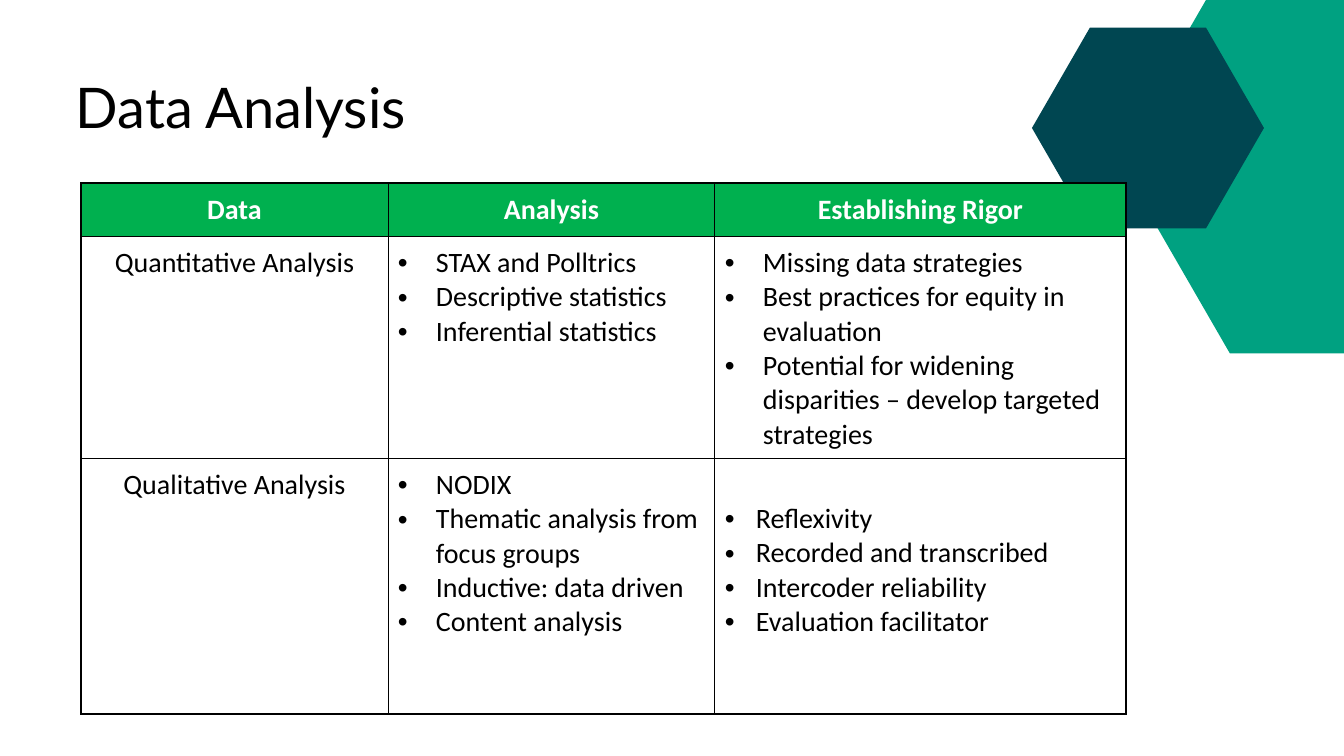
"""Build the Data Analysis slide with its table and two hexagons."""
import math
from pptx import Presentation, util as u
from pptx.dml.color import RGBColor
from pptx.enum import text
from pptx.oxml import parse_xml
from pptx.oxml.ns import nsdecls

TITLE = "Data Analysis"
HEADER = ["Data", "Analysis", "Establishing Rigor"]
BODY = [
    [
        ["Quantitative Analysis"],
        ["STAX and Polltrics", "Descriptive statistics", "Inferential statistics"],
        ["Missing data strategies", "Best practices for equity in evaluation",
         "Potential for widening disparities – develop targeted strategies"],
    ],
    [
        ["Qualitative Analysis"],
        ["NODIX", "Thematic analysis from focus groups",
         "Inductive: data driven", "Content analysis"],
        ["Reflexivity", "Recorded and transcribed",
         "Intercoder reliability", "Evaluation facilitator"],
    ],
]
THEME = {
    "title_font": "Lato", "title_size": 40,
    "table_font": "Calibri", "table_size": 20,
    "ink": "000000", "paper": "FFFFFF", "header": "00B04F",
    "green": "00A181", "teal": "004651",
    "outer_line": 1.5, "inner_line": 0.75,
}
HEXAGONS = [(1344, 156, 228, "green"), (1148, 128, 116, "teal")]
TITLE_BOX = (76, 73, 870, 67)
TABLE_ORIGIN = (81, 183)
COLUMNS = [307, 327, 411]
ROWS = [53, 222, 256]
MARGINS = {"margin_left": 10, "margin_right": 10, "margin_top": 10, "margin_bottom": 6}
LOWERED_CELL = (2, 2)
LOWERED_TOP = 44
INDENT, LOWERED_INDENT = 38, 31
SCALE = 914400 / 100.8


def px(length):
    return u.Emu(round(length * SCALE))


def color(name):
    return RGBColor.from_string(THEME[name])


def assign(target, values):
    for name, value in values.items():
        setattr(target, name, value)


def write(paragraph, words, kind, ink, bold=False):
    run = paragraph.add_run()
    run.text = words
    assign(run.font, {"name": THEME[kind + "_font"],
                      "size": u.Pt(THEME[kind + "_size"]), "bold": bold})
    run.font.color.rgb = color(ink)


def add_hexagon(slide, center_x, center_y, radius, fill):
    corners = [(round((center_x + radius * math.cos(k * math.pi / 3)) * SCALE),
                round((center_y + radius * math.sin(k * math.pi / 3)) * SCALE))
               for k in range(6)]
    builder = slide.shapes.build_freeform(*corners[0])
    builder.add_line_segments(corners[1:], close=True)
    shape = builder.convert_to_shape()
    shape.shadow.inherit = False
    shape.fill.solid()
    shape.fill.fore_color.rgb = color(fill)
    shape.line.fill.background()


def add_bullet(paragraph, indent):
    properties = paragraph._p.get_or_add_pPr()
    properties.set("marL", str(px(indent)))
    properties.set("indent", str(-px(indent)))
    for xml in (f'<a:buFont {nsdecls("a")} typeface="Arial"/>',
                f'<a:buChar {nsdecls("a")} char="•"/>'):
        properties.append(parse_xml(xml))


def add_borders(cell, row, column):
    outer = {"L": column == 0, "R": column == len(COLUMNS) - 1,
             "T": row == 0, "B": row == len(ROWS) - 1}
    properties = cell._tc.get_or_add_tcPr()
    for position, (side, is_outer) in enumerate(outer.items()):
        width = u.Pt(THEME["outer_line" if is_outer else "inner_line"])
        properties.insert(position, parse_xml(
            f'<a:ln{side} {nsdecls("a")} w="{width}"><a:solidFill>'
            f'<a:srgbClr val="{THEME["ink"]}"/></a:solidFill></a:ln{side}>'))


def fill_cell(cell, row, column, lines):
    lowered = (row, column) == LOWERED_CELL
    margins = dict(MARGINS, margin_top=LOWERED_TOP) if lowered else MARGINS
    assign(cell, {name: px(value) for name, value in margins.items()})
    cell.vertical_anchor = text.MSO_ANCHOR.TOP
    is_header = row == 0
    if is_header:
        cell.fill.solid()
        cell.fill.fore_color.rgb = color("header")
    else:
        cell.fill.background()
    for position, line in enumerate(lines):
        frame = cell.text_frame
        paragraph = frame.add_paragraph() if position else frame.paragraphs[0]
        if is_header or column == 0:
            paragraph.alignment = text.PP_ALIGN.CENTER
        else:
            add_bullet(paragraph, LOWERED_INDENT if lowered else INDENT)
        write(paragraph, line, "table", "paper" if is_header else "ink", is_header)
    add_borders(cell, row, column)


def add_analysis_table(slide):
    content = [[[heading] for heading in HEADER], *BODY]
    box = (*TABLE_ORIGIN, sum(COLUMNS), sum(ROWS))
    table = slide.shapes.add_table(len(ROWS), len(COLUMNS), *map(px, box)).table
    assign(table, {"first_row": False, "horz_banding": False})
    for column, width in zip(table.columns, COLUMNS):
        column.width = px(width)
    for row, height in zip(table.rows, ROWS):
        row.height = px(height)
    for row, cells in enumerate(content):
        for column, lines in enumerate(cells):
            fill_cell(table.cell(row, column), row, column, lines)


def add_title(slide):
    frame = slide.shapes.add_textbox(*map(px, TITLE_BOX)).text_frame
    assign(frame, {"word_wrap": True, **dict.fromkeys(MARGINS, 0)})
    write(frame.paragraphs[0], TITLE, "title", "ink")


def main():
    presentation = Presentation()
    assign(presentation, {"slide_width": px(1344), "slide_height": px(756)})
    slide = presentation.slides.add_slide(presentation.slide_layouts[6])
    for hexagon in HEXAGONS:
        add_hexagon(slide, *hexagon)
    add_analysis_table(slide)
    add_title(slide)
    presentation.save("out.pptx")


if __name__ == "__main__":
    main()
